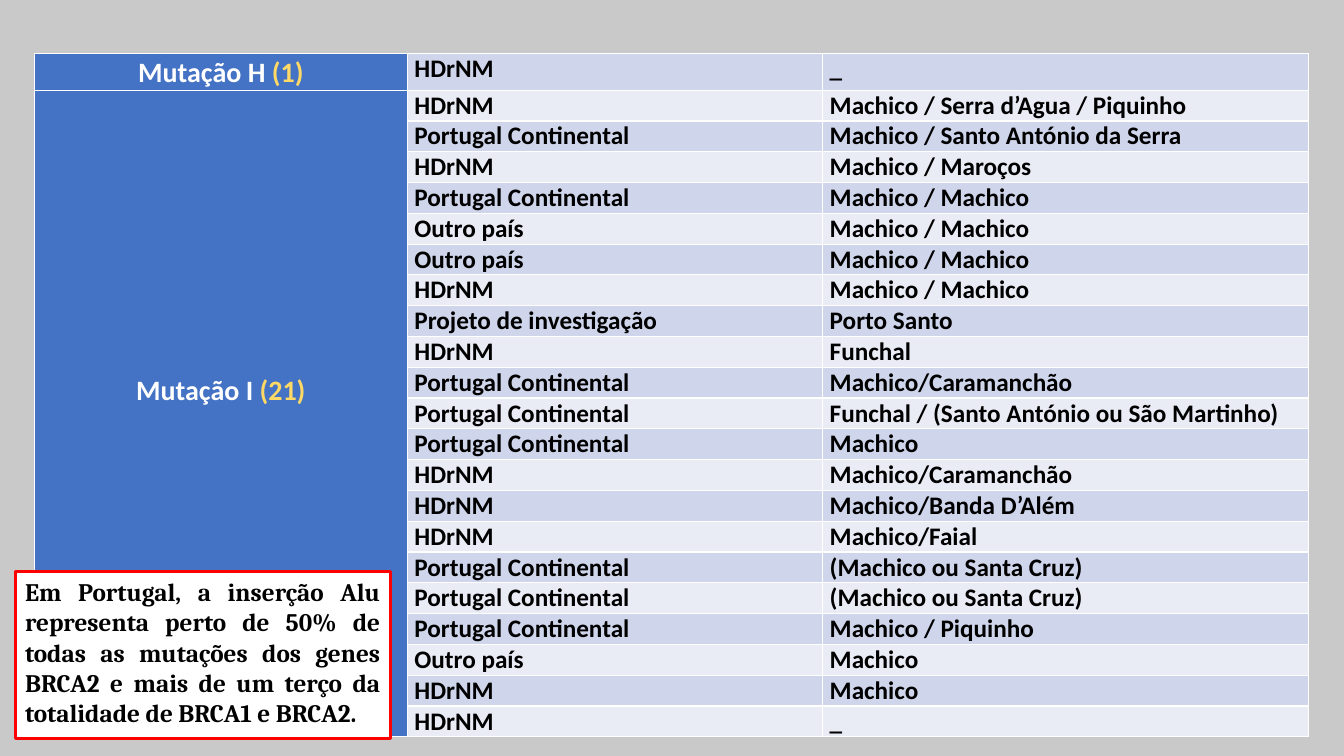
from lxml import etree
from pptx import Presentation
from pptx.dml.color import RGBColor
from pptx.enum.text import MSO_ANCHOR, MSO_AUTO_SIZE, PP_ALIGN
from pptx.oxml.ns import qn
from pptx.util import Inches, Pt

CENTER, JUSTIFY, LEFT = PP_ALIGN.CENTER, PP_ALIGN.JUSTIFY, PP_ALIGN.LEFT
TOP, MIDDLE = MSO_ANCHOR.TOP, MSO_ANCHOR.MIDDLE
GROW = MSO_AUTO_SIZE.SHAPE_TO_FIT_TEXT

# Content: each mutation, its case count and the (origin, place) of each case
HOSPITAL, MAINLAND, ABROAD = "HDrNM", "Portugal Continental", "Outro país"
MUTATIONS = [
    ("Mutação H ", "(1)", [(HOSPITAL, "_")]),
    ("Mutação I ", "(21)", [
        (HOSPITAL, "Machico / Serra d’Agua / Piquinho"),
        (MAINLAND, "Machico / Santo António da Serra"),
        (HOSPITAL, "Machico / Maroços"),
        (MAINLAND, "Machico / Machico"),
        (ABROAD, "Machico / Machico"),
        (ABROAD, "Machico / Machico"),
        (HOSPITAL, "Machico / Machico"),
        ("Projeto de investigação", "Porto Santo"),
        (HOSPITAL, "Funchal"),
        (MAINLAND, "Machico/Caramanchão"),
        (MAINLAND, "Funchal / (Santo António ou São Martinho)"),
        (MAINLAND, "Machico"),
        (HOSPITAL, "Machico/Caramanchão"),
        (HOSPITAL, "Machico/Banda D’Além"),
        (HOSPITAL, "Machico/Faial"),
        (MAINLAND, "(Machico ou Santa Cruz)"),
        (MAINLAND, "(Machico ou Santa Cruz)"),
        (MAINLAND, "Machico / Piquinho"),
        (ABROAD, "Machico"),
        (HOSPITAL, "Machico"),
        (HOSPITAL, "_"),
    ]),
]
NOTE = ("Em Portugal, a inserção Alu representa perto de 50% de todas as mutações "
        "dos genes BRCA2 e mais de um terço da totalidade de BRCA1 e BRCA2.")

# Layout and colours
COLUMN_WIDTHS = [3.7, 4.12, 4.82]
FIRST_ROW_HEIGHT, ROW_HEIGHT = 0.36, 0.3
LABEL_LIFT = 0.47
BLUE, GOLD, WHITE, BLACK, RED = "4472C4", "FFD966", "FFFFFF", "000000", "FF0000"
BANDS = ["CFD5EA", "E9EBF5"]


def color(value):
    return RGBColor.from_string(value)


def paint(target, value):
    target.fill.solid()
    target.fill.fore_color.rgb = color(value)


def write(frame, *spans, size=18, font="Calibri", align=LEFT, line=None, after=None):
    """Write (text, colour) spans as one bold paragraph."""
    para = frame.paragraphs[0]
    para.alignment, para.line_spacing = align, line
    if after is not None:
        para.space_after = Pt(after)
    for text, ink in spans:
        span = para.add_run()
        span.text = text
        span.font.name, span.font.size, span.font.bold = font, Pt(size), True
        span.font.color.rgb = color(ink)


def style_cell(cell, fill):
    """Set insets, white borders and the fill."""
    cell.margin_left = cell.margin_right = Inches(0.07)
    cell.margin_top = cell.margin_bottom = 0
    properties = cell._tc.get_or_add_tcPr()
    for side in ("a:lnL", "a:lnR", "a:lnT", "a:lnB"):
        border = etree.SubElement(properties, qn(side), w=str(Pt(1)))
        solid = etree.SubElement(border, qn("a:solidFill"))
        etree.SubElement(solid, qn("a:srgbClr"), val=WHITE)
    paint(cell, fill)


deck = Presentation()
deck.slide_width, deck.slide_height = Inches(13.33), Inches(7.5)
page = deck.slides.add_slide(deck.slide_layouts[6])
paint(page.background, "C9C9C9")

# Table grid
row_count = sum(len(cases) for _, _, cases in MUTATIONS)
table_height = FIRST_ROW_HEIGHT + (row_count - 1) * ROW_HEIGHT
table = page.shapes.add_table(
    row_count, len(COLUMN_WIDTHS), Inches(0.34), Inches(0.53),
    Inches(sum(COLUMN_WIDTHS)), Inches(table_height)).table
table.first_row = table.horz_banding = False
for column, width in zip(table.columns, COLUMN_WIDTHS):
    column.width = Inches(width)
for index, row in enumerate(table.rows):
    row.height = Inches(ROW_HEIGHT if index else FIRST_ROW_HEIGHT)

# Cases, with one merged label per mutation
start = 0
for name, count, cases in MUTATIONS:
    for index, case in enumerate(cases, start):
        style_cell(table.cell(index, 0), BLUE)
        for column, text in enumerate(case, 1):
            cell = table.cell(index, column)
            style_cell(cell, BANDS[index % 2])
            write(cell.text_frame, (text, BLACK))
    label = table.cell(start, 0)
    label.vertical_anchor = MIDDLE
    write(label.text_frame, (name, WHITE), (count, GOLD),
          size=20, align=CENTER, line=1.07, after=8)
    if len(cases) > 1:
        label.margin_bottom = Inches(LABEL_LIFT)
        label.merge(table.cell(start + len(cases) - 1, 0))
    start += len(cases)

# Note over the lower left corner
note = page.shapes.add_textbox(Inches(0.15), Inches(5.67), Inches(3.72), Inches(1.66))
paint(note, WHITE)
note.line.color.rgb = color(RED)
note.line.width = Pt(2.25)
note.text_frame.word_wrap = True
note.text_frame.auto_size = GROW
note.text_frame.vertical_anchor = TOP
write(note.text_frame, (NOTE, BLACK), font="Cambria", align=JUSTIFY)

deck.save("out.pptx")
